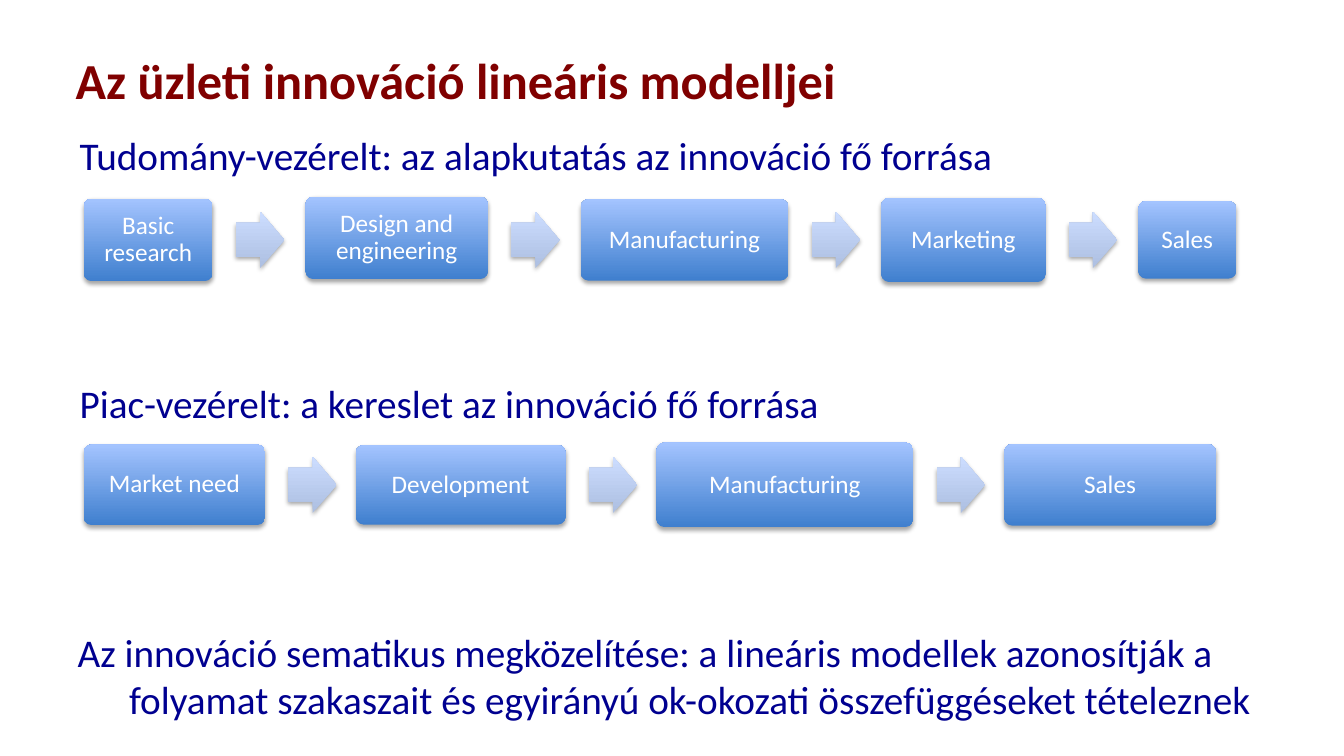
"""Build the slide on linear models of business innovation."""
from dataclasses import dataclass

from lxml import etree
from pptx import Presentation
from pptx.dml.color import RGBColor
from pptx.enum.shapes import MSO_SHAPE
from pptx.enum.text import MSO_ANCHOR, MSO_AUTO_SIZE, PP_ALIGN
from pptx.oxml import parse_xml
from pptx.oxml.ns import nsdecls, qn
from pptx.util import Pt

ROUNDED = MSO_SHAPE.ROUNDED_RECTANGLE
ARROW = MSO_SHAPE.RIGHT_ARROW
MIDDLE, TOP = MSO_ANCHOR.MIDDLE, MSO_ANCHOR.TOP
LEFT, CENTER = PP_ALIGN.LEFT, PP_ALIGN.CENTER
NO_FIT = MSO_AUTO_SIZE.NONE
PX = 9144


@dataclass(frozen=True)
class Theme:
    """Colours and type sizes of the slide."""
    font: str = "Calibri"
    title: str = "800000"
    body: str = "000090"
    label: str = "FFFFFF"
    step_fill: tuple = ("3F7FCE", "A4C4FF")
    arrow_fill: tuple = ("ADBFE1", "CCDDFF")
    shadow: str = "000000"
    title_size: int = 36
    body_size: int = 28
    label_size: int = 18


THEME = Theme()

TITLE = "Az üzleti innováció lineáris modelljei"
BODY = (
    ("Tudomány-vezérelt: az alapkutatás az innováció fő forrása",
     {"level": 1, "line_spacing": Pt(31.5), "space_before": Pt(0)}, 2, 0),
    ("Piac-vezérelt: a kereslet az innováció fő forrása",
     {"level": 1, "line_spacing": Pt(31.5), "space_before": Pt(146)}, 2, 0),
    ("Az innováció sematikus megközelítése: a lineáris modellek azonosítják a "
     "folyamat szakaszait és egyirányú ok-okozati összefüggéseket tételeznek",
     {"level": 0, "line_spacing": 1.0, "space_before": Pt(144)}, 51, -51),
)
SCIENCE_STEPS = (
    ("Basic research", 128, 82, 0),
    ("Design and engineering", 181, 82, -2),
    ("Manufacturing", 206, 81, 0),
    ("Marketing", 163, 84, 0),
    ("Sales", 97, 77, 0),
)
MARKET_STEPS = (
    ("Market need", 180, 80, 0),
    ("Development", 208, 79, 0),
    ("Manufacturing", 255, 84, 0),
    ("Sales", 210, 81, 0),
)


def apply(target, values):
    """Set every attribute named in a dict of format values."""
    for name, value in values.items():
        setattr(target, name, value)


def place(shape, box):
    """Move a shape to a box given in px."""
    apply(shape, dict(zip(("left", "top", "width", "height"),
                          (round(value * PX) for value in box))))


def write(para, text, size, colour, bold=False):
    """Add one formatted run to a paragraph."""
    span = para.add_run()
    span.text = text
    apply(span.font, {"name": THEME.font, "size": Pt(size), "bold": bold})
    span.font.color.rgb = RGBColor.from_string(colour)


def add_title(page, box):
    """Fill the title placeholder inside the box."""
    title = page.shapes.title
    place(title, box)
    apply(title.text_frame, {"vertical_anchor": MIDDLE, "auto_size": NO_FIT,
                             "word_wrap": True})
    para = title.text_frame.paragraphs[0]
    para.alignment = LEFT
    write(para, TITLE, THEME.title_size, THEME.title, True)


def add_body(page, box):
    """Fill the body placeholder with its unbulleted statements."""
    body = page.placeholders[1]
    place(body, box)
    frame = body.text_frame
    apply(frame, {"vertical_anchor": TOP, "auto_size": NO_FIT, "word_wrap": True})
    for index, (text, spacing, margin, indent) in enumerate(BODY):
        para = frame.add_paragraph() if index else frame.paragraphs[0]
        settings = para._p.get_or_add_pPr()
        settings.set("marL", str(margin * PX))
        settings.set("indent", str(indent * PX))
        etree.SubElement(settings, qn("a:buNone"))
        apply(para, {"alignment": LEFT, **spacing})
        write(para, text, THEME.body_size, THEME.body)


def add_block(group, kind, box, adjustments, colours):
    """Draw a shaded, softly shadowed preset shape in the group."""
    block = group.shapes.add_shape(kind, 0, 0, PX, PX)
    place(block, box)
    for index, value in enumerate(adjustments):
        block.adjustments[index] = value
    block.fill.gradient()
    block.fill.gradient_angle = 90
    for stop, colour in zip(block.fill.gradient_stops, colours):
        stop.color.rgb = RGBColor.from_string(colour)
    block.line.fill.background()
    block.shadow.inherit = False
    block._element.spPr.find(qn("a:effectLst")).append(parse_xml(
        f'<a:outerShdw {nsdecls("a")} blurRad="40000" dist="23000" '
        f'dir="5400000" rotWithShape="0"><a:srgbClr val="{THEME.shadow}">'
        '<a:alpha val="35000"/></a:srgbClr></a:outerShdw>'))
    return block


def add_step(group, box, label):
    """Draw one labelled process step."""
    step = add_block(group, ROUNDED, box, (0.1,), THEME.step_fill)
    frame = step.text_frame
    margins = ("margin_left", "margin_right", "margin_top", "margin_bottom")
    apply(frame, {"word_wrap": True, "vertical_anchor": MIDDLE,
                  **dict.fromkeys(margins, 9 * PX)})
    para = frame.paragraphs[0]
    apply(para, {"alignment": CENTER, "line_spacing": 0.9})
    write(para, label, THEME.label_size, THEME.label)


def add_flow(page, left, middle, gap, steps):
    """Lay out steps from left to right with an arrow in every gap."""
    group = page.shapes.add_group_shape()
    for index, (label, width, height, shift) in enumerate(steps):
        if index:
            add_block(group, ARROW, (left - gap + 23, middle - 28, 48, 56),
                      (0.6, 0.5), THEME.arrow_fill)
        add_step(group, (left, middle - height / 2 + shift, width, height), label)
        left += width + gap


def main():
    """Compose and save the deck."""
    deck = Presentation()
    apply(deck, {"slide_width": 1333 * PX, "slide_height": 750 * PX})
    page = deck.slides.add_slide(deck.slide_layouts[1])
    add_title(page, (65, 20, 1133, 117))
    add_body(page, (67, 128, 1211, 603))
    add_flow(page, 83, 481, 90, MARKET_STEPS)
    add_flow(page, 83, 238, 92, SCIENCE_STEPS)
    deck.save("out.pptx")


if __name__ == "__main__":
    main()
